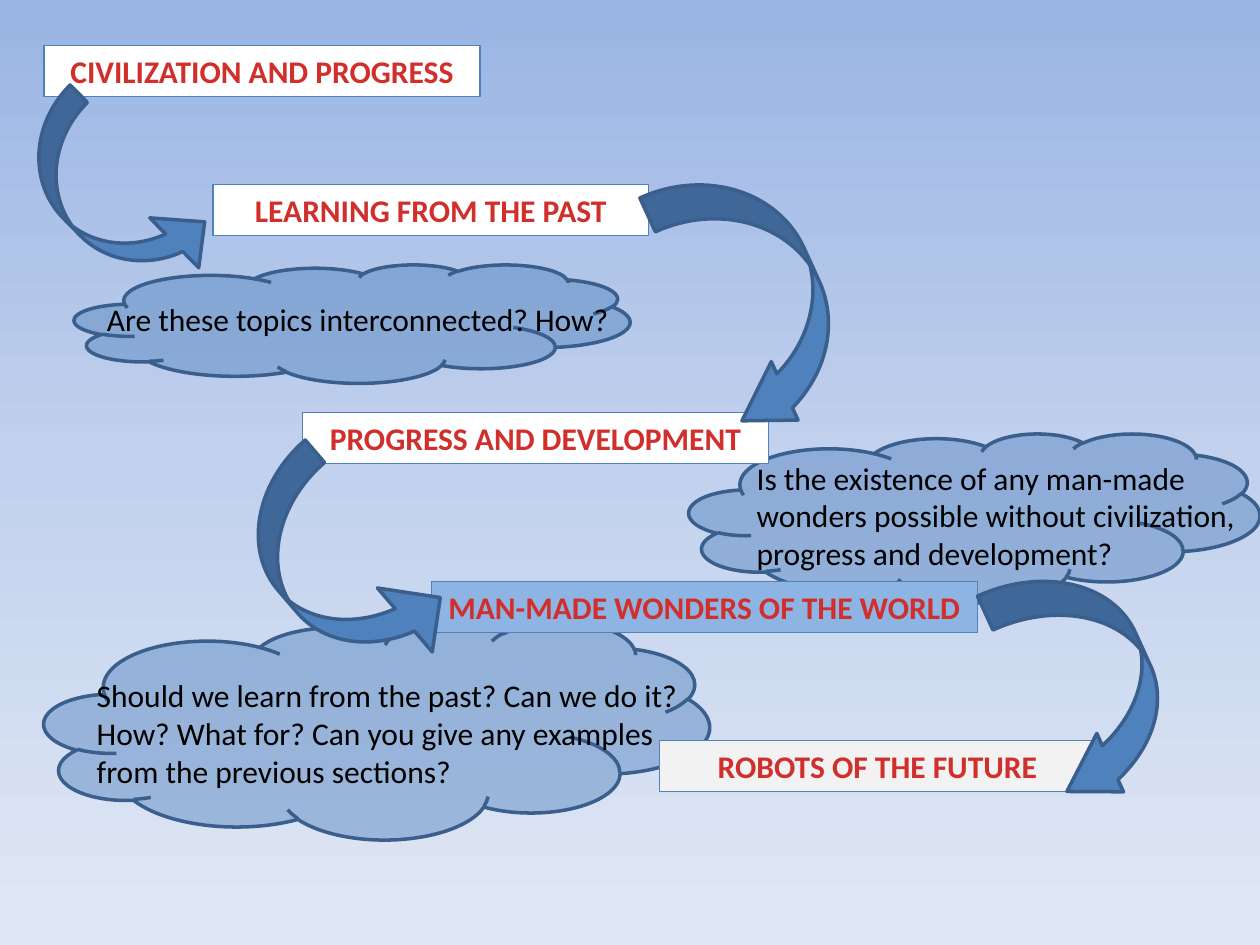
from copy import deepcopy

from pptx import Presentation
from pptx.dml.color import RGBColor
from pptx.enum.shapes import MSO_SHAPE as Kind
from pptx.enum.text import MSO_ANCHOR as Anchor, MSO_AUTO_SIZE as Fit, PP_ALIGN as Align
from pptx.oxml.ns import qn
from pptx.util import Pt

BLUE, EDGE, RED = "4F81BD", "3A5F8C", "D02F2C"


def tint(color, code):
    color.rgb = RGBColor.from_string(code)


def draw(kind, box, fill, edge, width):
    """Add a preset shape with a solid fill, an outline and no shadow."""
    shape = slide.shapes.add_shape(kind, *map(Pt, box))
    shape.shadow.inherit = False
    shape.fill.solid()
    tint(shape.fill.fore_color, fill)
    tint(shape.line.color, edge)
    shape.line.width = Pt(width)
    return shape


deck = Presentation()
deck.slide_width, deck.slide_height = Pt(720), Pt(540)
slide = deck.slides.add_slide(deck.slide_layouts[6])

# Background: three-stop gradient from top to bottom
back = slide.background.fill
back.gradient()
back.gradient_angle = 270
first = slide.element.find(".//" + qn("a:gs"))
first.addnext(deepcopy(first))
sky = [(0, "9AB5E4"), (0.5, "C2D1ED"), (1, "E1E8F5")]
for stop, (place, code) in zip(back.gradient_stops, sky):
    stop.position = place
    tint(stop.color, code)

# Translucent clouds
for box in [(25.2, 355, 380.2, 124.6), (393.8, 247.7, 326.2, 96.5),
            (42.5, 151.2, 317.5, 67.7)]:
    cloud = draw(Kind.CLOUD, box, BLUE, EDGE, 2)
    color = cloud.fill._xPr.find(qn("a:solidFill")).find(qn("a:srgbClr"))
    color.append(color.makeelement(qn("a:alpha"), {"val": "45000"}))

# Topic labels
topics = [
    ("CIVILIZATION AND PROGRESS", 25.2, 25.9, 249.1, "FFFFFF"),
    ("LEARNING FROM THE PAST", 121.7, 105.5, 249.1, "FFFFFF"),
    ("PROGRESS AND DEVELOPMENT", 172.8, 235.8, 266.4, "FFFFFF"),
    ("MAN-MADE WONDERS OF THE WORLD", 246.6, 332.3, 311.8, "8EB4E3"),
    ("ROBOTS OF THE FUTURE", 376.9, 423, 249.1, "F2F2F2"),
]
for text, left, top, width, fill in topics:
    label = draw(Kind.RECTANGLE, (left, top, width, 29.1), fill, BLUE, 0.75)
    frame = label.text_frame
    frame.text = text
    frame.vertical_anchor = Anchor.MIDDLE
    para = frame.paragraphs[0]
    para.alignment = Align.CENTER
    para.font.name, para.font.size, para.font.bold = "Calibri", Pt(18), True
    tint(para.font.color, RED)

# Questions over the clouds
asks = [
    ("Are these topics interconnected? How?", (54, 167.8, 304.6, 29.1), False),
    ("Is the existence of any man-made\nwonders possible without civilization,\n"
     "progress and development?", (425.3, 258.5, 294.7, 72.7), True),
    ("Should we learn from the past? Can we do it? How? What for? "
     "Can you give any examples from the previous sections?",
     (48.2, 383, 360, 72.7), True),
]
for text, box, wrap in asks:
    frame = slide.shapes.add_textbox(*map(Pt, box)).text_frame
    frame.text = text
    frame.word_wrap = wrap
    frame.auto_size = Fit.SHAPE_TO_FIT_TEXT
    for para in frame.paragraphs:
        para.font.name, para.font.size = "Calibri", Pt(18)
        tint(para.font.color, "000000")

# Curved arrows from topic to topic
RIGHT, LEFT = Kind.CURVED_RIGHT_ARROW, Kind.CURVED_LEFT_ARROW
arrows = [
    (RIGHT, (37.4, 49.7, 56.2, 129.6), 315.5, (0.25, 0.71, 0.37)),
    (LEFT, (395.3, 90.7, 73.4, 158.4), 335.4, (0.29, 0.5, 0.4)),
    (RIGHT, (161.3, 256.3, 67.7, 142.6), 319.4, (0.25, 0.71, 0.35)),
    (LEFT, (584.6, 319, 73.4, 141.1), 335.4, (0.29, 0.5, 0.4)),
]
for kind, box, turn, bends in arrows:
    arrow = draw(kind, box, BLUE, EDGE, 2)
    arrow.rotation = turn
    for i, bend in enumerate(bends):
        arrow.adjustments[i] = bend

deck.save("out.pptx")
